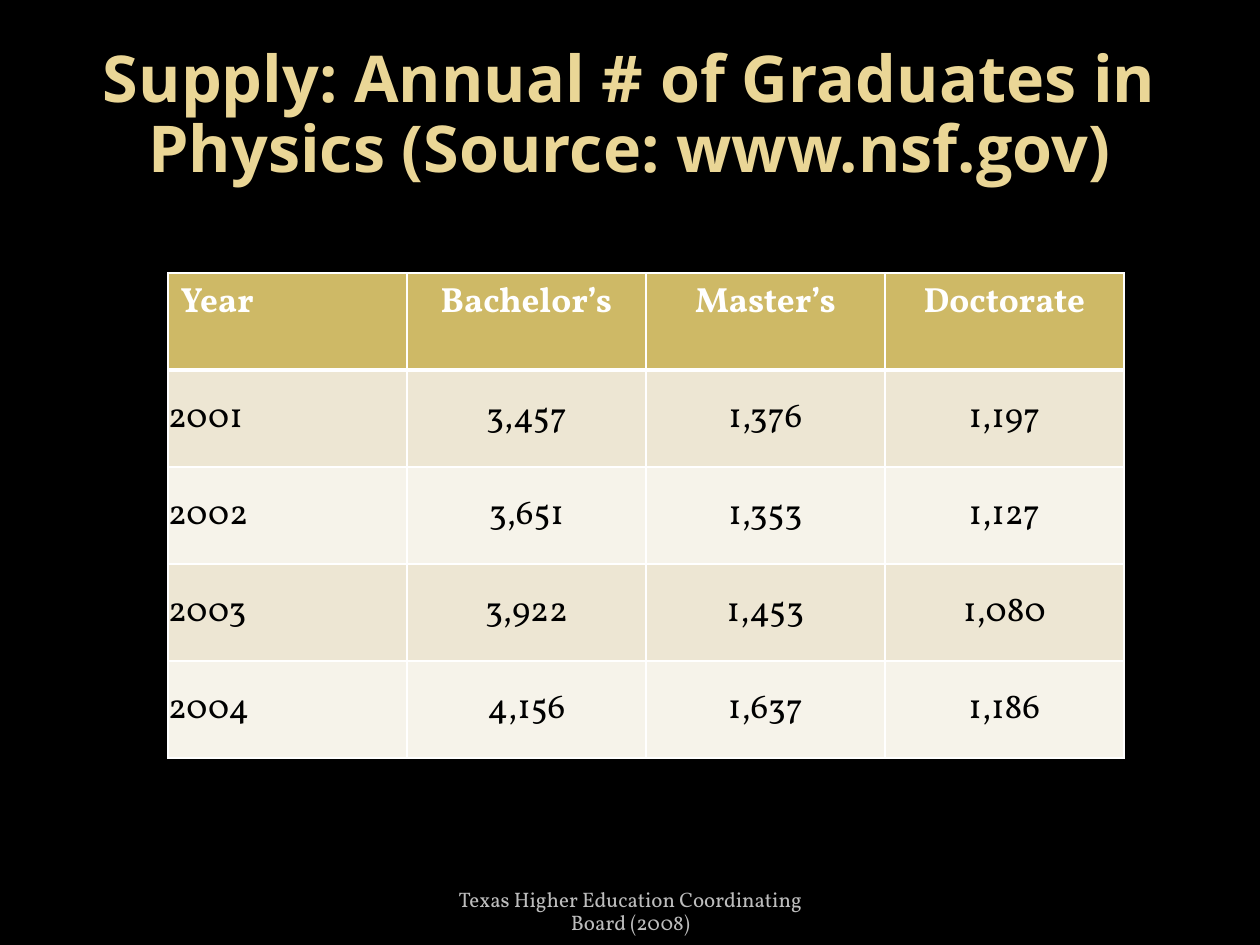
from dataclasses import dataclass

from lxml.etree import SubElement
from pptx import Presentation
from pptx.dml.color import RGBColor
from pptx.enum.text import MSO_ANCHOR as Anchor, PP_ALIGN as Align
from pptx.oxml.ns import qn
from pptx.util import Emu, Pt

EMU_PER_PX = 914400 / 126
COLORS = {
    "background": "000000",
    "title": "EAD696",
    "footer": "BDBDBD",
    "header": "CEB966",
    "band_dark": "EDE6D3",
    "band_light": "F6F3EA",
    "white": "FFFFFF",
    "black": "000000",
}
ROWS = [
    ("Year", "Bachelor’s", "Master’s", "Doctorate"),
    ("2001", "3,457", "1,376", "1,197"),
    ("2002", "3,651", "1,353", "1,127"),
    ("2003", "3,922", "1,453", "1,080"),
    ("2004", "4,156", "1,637", "1,186"),
]
COLUMN_WIDTH, ROW_HEIGHT = 239, 97


@dataclass
class TextStyle:
    font: str
    size: float
    color: str
    bold: bool = False
    line_spacing: float = 1.0


@dataclass
class Caption:
    text: str
    box: tuple[int, int, int, int]
    style: TextStyle
    anchor: Anchor
    bottom_inset: int


CAPTIONS = [
    Caption("Supply: Annual # of Graduates in Physics (Source: www.nsf.gov)",
            (63, 38, 1134, 157),
            TextStyle("Open Sans", 36.9, "title", True, 0.9), Anchor.MIDDLE, 6),
    Caption("Texas Higher Education Coordinating Board (2008)",
            (431, 885, 399, 50),
            TextStyle("Vollkorn", 12, "footer", False, 0.9), Anchor.BOTTOM, 0),
]
HEADER_STYLE = TextStyle("Vollkorn", 20, "white", True)
BODY_STYLE = TextStyle("Vollkorn", 20, "black")


def px(length: int) -> Emu:
    return Emu(round(length * EMU_PER_PX))


def rgb(name: str) -> RGBColor:
    return RGBColor.from_string(COLORS[name])


def write_text(frame, text: str, style: TextStyle, align: Align) -> None:
    frame.text = text
    paragraph = frame.paragraphs[0]
    paragraph.alignment = align
    paragraph.line_spacing = style.line_spacing
    font = paragraph.font
    font.name, font.size, font.bold = style.font, Pt(style.size), style.bold
    font.color.rgb = rgb(style.color)


def add_caption(slide, caption: Caption) -> None:
    frame = slide.shapes.add_textbox(*map(px, caption.box)).text_frame
    frame.word_wrap = True
    frame.vertical_anchor = caption.anchor
    frame.margin_bottom = px(caption.bottom_inset)
    write_text(frame, caption.text, caption.style, Align.CENTER)


def set_borders(cell, bottom_width: int) -> None:
    """Put white lines on all four sides, ahead of the cell fill."""
    properties = cell._tc.get_or_add_tcPr()
    widths = {"a:lnL": 1, "a:lnR": 1, "a:lnT": 1, "a:lnB": bottom_width}
    for position, (tag, width) in enumerate(widths.items()):
        line = SubElement(properties, qn(tag), w=str(Pt(width)))
        fill = SubElement(line, qn("a:solidFill"))
        SubElement(fill, qn("a:srgbClr"), val=COLORS["white"])
        properties.insert(position, line)


def add_graduate_table(slide, left: int, top: int) -> None:
    row_count, column_count = len(ROWS), len(ROWS[0])
    table = slide.shapes.add_table(
        row_count, column_count, px(left), px(top),
        px(COLUMN_WIDTH * column_count), px(ROW_HEIGHT * row_count)).table
    for row_index, values in enumerate(ROWS):
        is_header = row_index == 0
        band = "band_dark" if row_index % 2 else "band_light"
        for column_index, value in enumerate(values):
            cell = table.cell(row_index, column_index)
            cell.fill.solid()
            cell.fill.fore_color.rgb = rgb("header" if is_header else band)
            if not is_header:
                cell.vertical_anchor = Anchor.MIDDLE
                cell.margin_left = cell.margin_right = 0
                cell.margin_top = cell.margin_bottom = 0
            write_text(cell.text_frame, value,
                       HEADER_STYLE if is_header else BODY_STYLE,
                       Align.CENTER if column_index else Align.LEFT)
            # The rule under the header is shared with the first data row
            set_borders(cell, 3 if is_header else 1)
            if row_index == 1:
                cell._tc.tcPr.find(qn("a:lnT")).set("w", str(Pt(3)))


def main() -> None:
    presentation = Presentation()
    presentation.slide_width, presentation.slide_height = px(1260), px(945)
    slide = presentation.slides.add_slide(presentation.slide_layouts[6])
    slide.background.fill.solid()
    slide.background.fill.fore_color.rgb = rgb("background")

    # Title and footer
    for caption in CAPTIONS:
        add_caption(slide, caption)

    # Graduates per year and degree
    add_graduate_table(slide, 168, 273)

    presentation.save("out.pptx")


if __name__ == "__main__":
    main()
